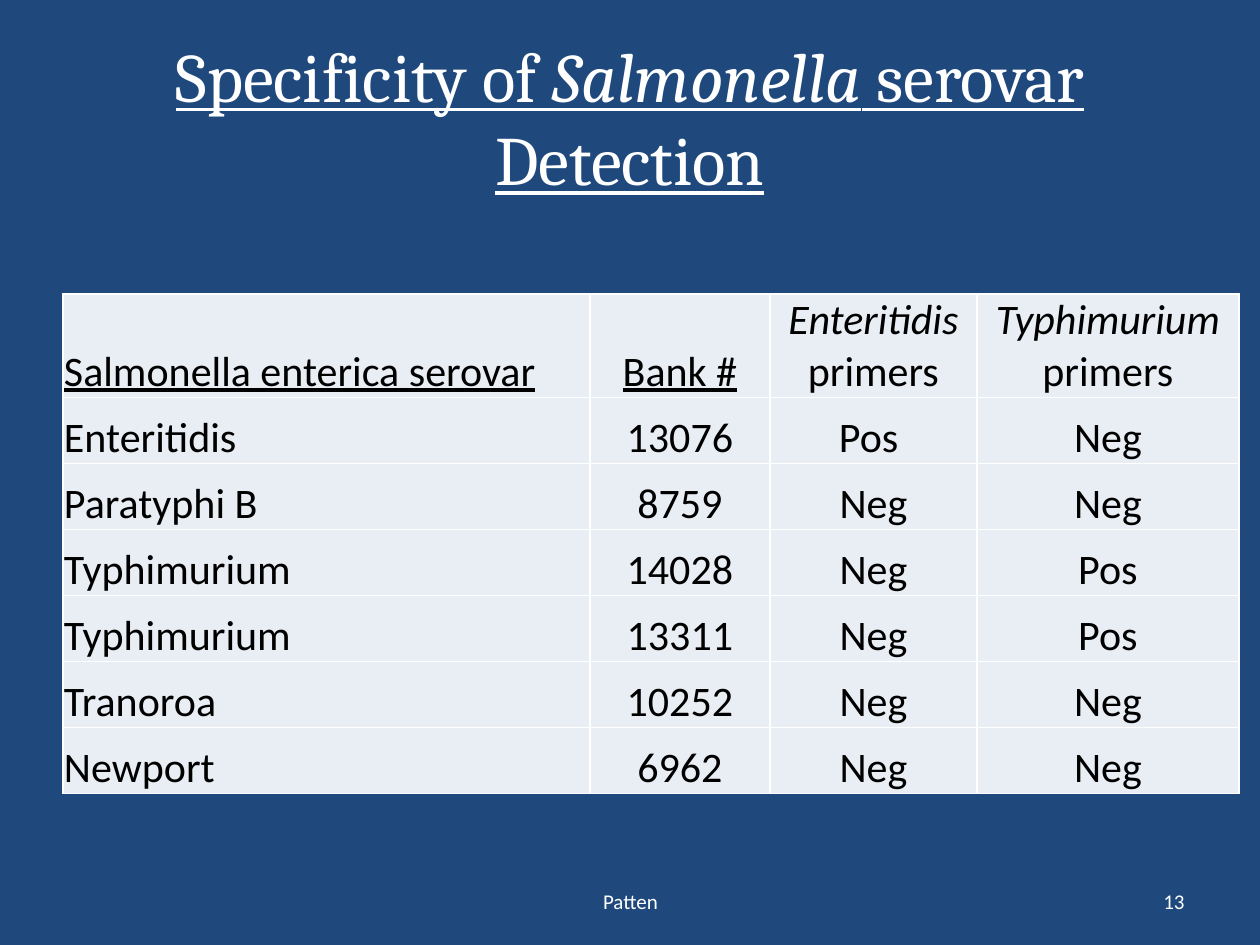
"""Builds a slide with a table of Salmonella serovar detection results."""
from lxml import etree
from pptx import Presentation
from pptx.dml.color import RGBColor
from pptx.enum.text import MSO_ANCHOR, PP_ALIGN
from pptx.oxml.ns import qn
from pptx.util import Emu, Pt

LEFT, CENTER, RIGHT = PP_ALIGN.LEFT, PP_ALIGN.CENTER, PP_ALIGN.RIGHT
MIDDLE, BOTTOM = MSO_ANCHOR.MIDDLE, MSO_ANCHOR.BOTTOM
EMU_PER_INCH = 914400
PX_PER_INCH = 126
COLORS = {"navy": "1F497D", "white": "FFFFFF", "black": "000000", "pale": "E9EDF4"}

COLUMN_WIDTHS = [527, 180, 207, 262]
ROW_HEIGHT = 66
HEADERS = ["Salmonella enterica serovar", "Bank #",
           "Enteritidis\nprimers", "Typhimurium\nprimers"]
RESULTS = [
    ["Enteritidis", "13076", "Pos ", "Neg"],
    ["Paratyphi B", "8759", "Neg", "Neg"],
    ["Typhimurium", "14028", "Neg", "Pos"],
    ["Typhimurium", "13311", "Neg", "Pos"],
    ["Tranoroa", "10252", "Neg", "Neg"],
    ["Newport", "6962", "Neg", "Neg"],
]


def px(length):
    """Turns pixels into EMU."""
    return Emu(round(length * EMU_PER_INCH / PX_PER_INCH))


def color(name):
    """Looks up a named colour."""
    return RGBColor.from_string(COLORS[name])


class SlideBuilder:
    """Holds the style and the current slide."""

    body_font = "Calibri"
    title_font = "Cambria"

    def __init__(self, deck):
        """Adds a title-only page on a navy background."""
        self.page = deck.slides.add_slide(deck.slide_layouts[5])
        self.page.background.fill.solid()
        self.page.background.fill.fore_color.rgb = color("navy")

    def style(self, para, size, name, align, font=body_font):
        """Sets alignment and font of a paragraph."""
        para.alignment = align
        para.font.size = Pt(size)
        para.font.name = font
        para.font.color.rgb = color(name)

    def title(self, left, top, width, height, spans):
        """Fills the title with (text, italic) spans, all underlined."""
        box = self.page.shapes.title
        box.left, box.top, box.width, box.height = map(px, (left, top, width, height))
        box.text_frame.vertical_anchor = MIDDLE
        para = box.text_frame.paragraphs[0]
        self.style(para, 39.6, "white", CENTER, self.title_font)
        for text, italic in spans:
            span = para.add_run()
            span.text = text
            span.font.italic = italic
            span.font.underline = True

    def label(self, left, top, width, height, text, align):
        """Adds a small footer text."""
        box = self.page.shapes.add_textbox(*map(px, (left, top, width, height)))
        frame = box.text_frame
        frame.word_wrap = True
        frame.vertical_anchor = MIDDLE
        frame.text = text
        self.style(frame.paragraphs[0], 12, "white", align)

    def borders(self, cell):
        """Draws a thin white line on each side of a cell."""
        properties = cell._tc.get_or_add_tcPr()
        for side in ("lnL", "lnR", "lnT", "lnB"):
            line = etree.SubElement(properties, qn(f"a:{side}"), w=str(Pt(1)))
            fill = etree.SubElement(line, qn("a:solidFill"))
            etree.SubElement(fill, qn("a:srgbClr"), val=COLORS["white"])

    def cell(self, cell, text, align):
        """Fills one table cell."""
        self.borders(cell)
        cell.fill.solid()
        cell.fill.fore_color.rgb = color("pale")
        cell.margin_left = cell.margin_right = cell.margin_top = px(1)
        cell.margin_bottom = 0
        cell.vertical_anchor = BOTTOM
        cell.text = text
        for para in cell.text_frame.paragraphs:
            self.style(para, 24, "black", align)

    def table(self, left, top, widths, row_height, rows):
        """Adds a table with a left-aligned first column."""
        shape = self.page.shapes.add_table(
            len(rows), len(widths), px(left), px(top),
            px(sum(widths)), px(row_height * len(rows)))
        table = shape.table
        for column, width in zip(table.columns, widths):
            column.width = px(width)
        for row, texts in zip(table.rows, rows):
            row.height = px(row_height)
            for index, text in enumerate(texts):
                self.cell(row.cells[index], text, CENTER if index else LEFT)
        return table


def main():
    """Builds and saves the deck."""
    deck = Presentation()
    deck.slide_width, deck.slide_height = px(1260), px(945)
    slide = SlideBuilder(deck)
    slide.title(63, 38, 1134, 157, [
        ("Specificity of ", False), ("Salmonella", True), (" serovar Detection", False)])
    table = slide.table(63, 294, COLUMN_WIDTHS, ROW_HEIGHT, [HEADERS] + RESULTS)
    for index in range(len(HEADERS)):
        font = table.cell(0, index).text_frame.paragraphs[0].font
        font.underline = index < 2
        font.italic = index >= 2
    slide.label(431, 876, 399, 50, "Patten", CENTER)
    slide.label(903, 876, 294, 50, "13", RIGHT)
    deck.save("out.pptx")


if __name__ == "__main__":
    main()
